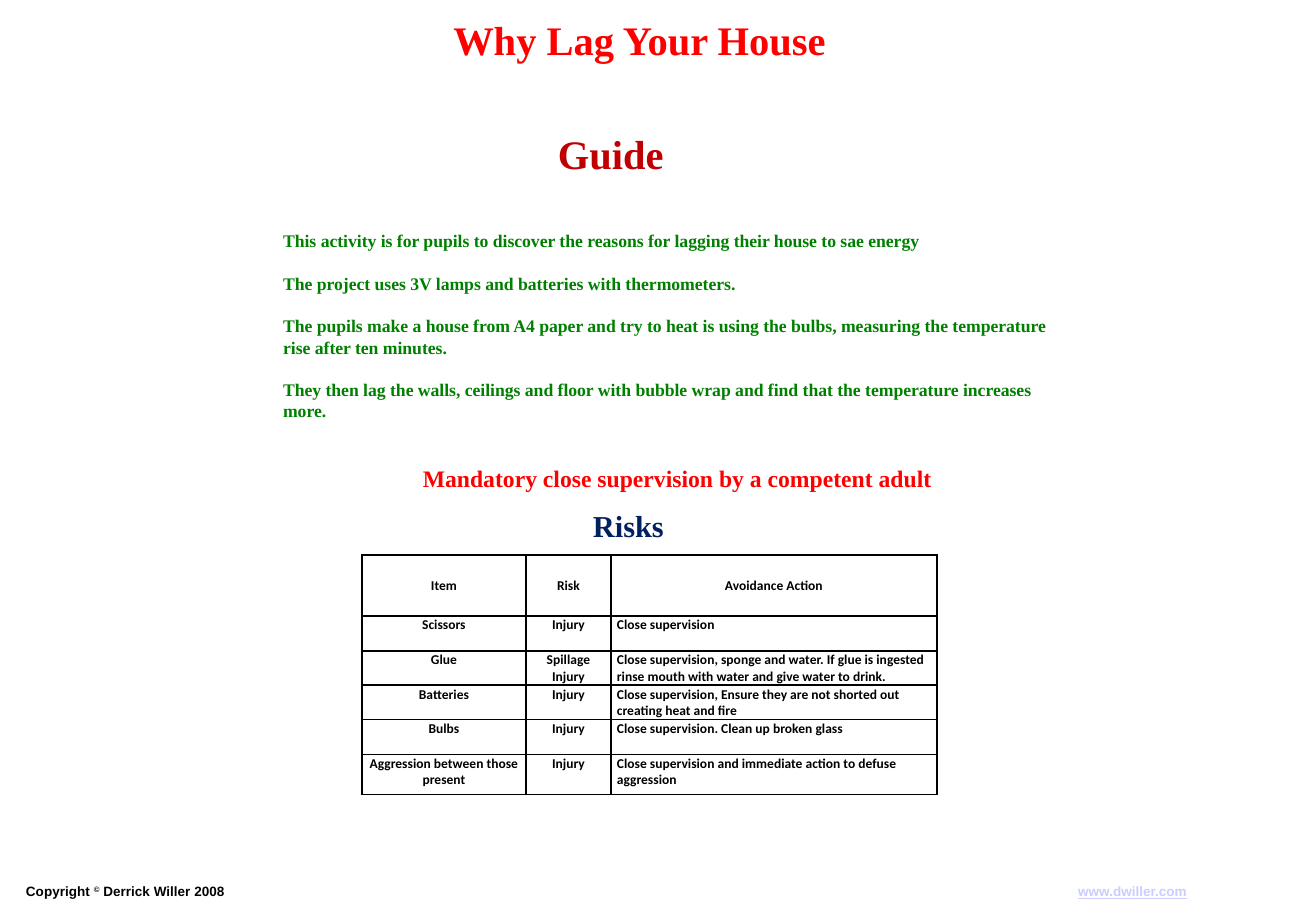
import pptx
import pptx.dml.color
import pptx.enum.text
import pptx.oxml.ns
import pptx.util
from lxml import etree

RGBColor = pptx.dml.color.RGBColor
ALIGN = pptx.enum.text.PP_ALIGN
ANCHOR = pptx.enum.text.MSO_ANCHOR
qn = pptx.oxml.ns.qn

BLACK = RGBColor(0x00, 0x00, 0x00)
RED = RGBColor(0xFF, 0x00, 0x00)
DARK_RED = RGBColor(0xC0, 0x00, 0x00)
GREEN = RGBColor(0x00, 0x80, 0x00)
NAVY = RGBColor(0x00, 0x20, 0x60)
LAVENDER = RGBColor(0xCC, 0xCC, 0xFF)

SERIF, SANS, TABLE_FONT = "Times New Roman", "Arial", "Calibri"
EMU_PER_PX = 7526


def px(length):
    return pptx.util.Emu(length * EMU_PER_PX)


class Page:
    def __init__(self, deck):
        self.slide = deck.slides.add_slide(deck.slide_layouts[1])

    def style(self, para, size, color, font=SERIF, align=ALIGN.LEFT):
        para.alignment = align
        para.font.name = font
        para.font.size = pptx.util.Pt(size)
        para.font.bold = True
        para.font.color.rgb = color

    def place(self, box, left, top, width, height, wrap):
        box.left, box.top, box.width, box.height = map(px, (left, top, width, height))
        frame = box.text_frame
        frame.auto_size = pptx.enum.text.MSO_AUTO_SIZE.NONE
        frame.vertical_anchor = ANCHOR.TOP
        frame.word_wrap = wrap
        return frame

    def title(self, text, size, color, *area):
        frame = self.place(self.slide.shapes.title, *area, wrap=False)
        frame.text = text
        self.style(frame.paragraphs[0], size, color, align=ALIGN.CENTER)

    def body(self, entries, *area):
        """Each entry is (text, size, color, align, space before in points)."""
        frame = self.place(self.slide.placeholders[1], *area, wrap=True)
        frame.text = "\n".join(entry[0] for entry in entries)
        for para, (_, size, color, align, gap) in zip(frame.paragraphs, entries):
            properties = para._p.get_or_add_pPr()
            properties.set("marL", "0")
            properties.set("indent", "0")
            etree.SubElement(properties, qn("a:buNone"))
            para.line_spacing = 1.0
            para.space_before = pptx.util.Pt(gap)
            self.style(para, size, color, align=align)

    def label(self, spans, size, color, *area, font=SERIF, align=ALIGN.LEFT, wrap=False):
        box = self.slide.shapes.add_textbox(0, 0, 0, 0)
        para = self.place(box, *area, wrap=wrap).paragraphs[0]
        for text in spans:
            para.add_run().text = text
        self.style(para, size, color, font, align)
        return para

    def border(self, cell, color, width):
        properties = cell._tc.get_or_add_tcPr()
        for side in ("a:lnL", "a:lnR", "a:lnT", "a:lnB"):
            line = etree.SubElement(properties, qn(side), w=str(pptx.util.Pt(width)))
            fill = etree.SubElement(line, qn("a:solidFill"))
            etree.SubElement(fill, qn("a:srgbClr"), val=str(color))

    def table(self, rows, left, top, widths, heights):
        table = self.slide.shapes.add_table(
            len(rows), len(widths), px(left), px(top), px(sum(widths)), px(sum(heights))
        ).table
        table.first_row = table.horz_banding = False
        for column, width in zip(table.columns, widths):
            column.width = px(width)
        for row, height in zip(table.rows, heights):
            row.height = px(height)
        for r, texts in enumerate(rows):
            for c, text in enumerate(texts):
                cell = table.cell(r, c)
                cell.text = text
                cell.margin_left = cell.margin_right = px(6)
                cell.margin_top, cell.margin_bottom = px(1), px(0)
                cell.vertical_anchor = ANCHOR.MIDDLE if r == 0 else ANCHOR.TOP
                self.border(cell, BLACK, 1)
                cell.fill.background()
                align = ALIGN.LEFT if r and c == 2 else ALIGN.CENTER
                for para in cell.text_frame.paragraphs:
                    self.style(para, 8, BLACK, TABLE_FONT, align)


RISKS = [
    ("Item", "Risk", "Avoidance Action"),
    ("Scissors", "Injury", "Close supervision"),
    ("Glue", "Spillage\nInjury",
     "Close supervision, sponge and water. If glue is ingested rinse mouth with water "
     "and give water to drink."),
    ("Batteries", "Injury",
     "Close supervision, Ensure they are not shorted out creating heat and fire"),
    ("Bulbs", "Injury", "Close supervision. Clean up broken glass"),
    ("Aggression between those present", "Injury",
     "Close supervision and immediate action to defuse aggression"),
]
GUIDE = [
    "This activity is for pupils to discover the reasons for lagging their house to sae energy",
    "The project uses 3V lamps and batteries with thermometers.",
    "The pupils make a house from A4 paper and try to heat is using the bulbs, measuring "
    "the temperature rise after ten minutes.",
    "They then lag the walls, ceilings and floor with bubble wrap and find that the "
    "temperature increases more.",
]
WARNING = "Mandatory close supervision by a competent adult"
LINE_GAP = 12.6


def main():
    deck = pptx.Presentation()
    deck.slide_width, deck.slide_height = px(1316), px(911)
    page = Page(deck)

    # Headings
    page.title("Why Lag Your House", 24, RED, 439, 9, 401, 61)
    page.label(["Guide"], 24, DARK_RED, 546, 123, 131, 61)

    # Guide text and warning
    entries = [(text, 10.5, GREEN, ALIGN.LEFT, LINE_GAP if number else 0)
               for number, text in enumerate(GUIDE)]
    entries.append((WARNING, 14, RED, ALIGN.CENTER, 2 * LINE_GAP))
    page.body(entries, 271, 224, 813, 299)

    # Risk table
    page.label(["Risks"], 18, NAVY, 581, 501, 96, 49)
    page.table(RISKS, 362, 555, (164, 85, 326), (61, 35, 34, 34, 35, 40))

    # Footer
    notice = page.label(["Copyright ", "©", " Derrick Willer 2008"], 8, BLACK,
                        14, 877, 686, 29, font=SANS, wrap=True)
    notice.runs[1]._r.get_or_add_rPr().set("baseline", "30000")
    address = page.label(["www.dwiller.com"], 8, LAVENDER, 1036, 877, 163, 29,
                         font=SANS, align=ALIGN.RIGHT, wrap=True)
    address.font.underline = True

    deck.save("out.pptx")


if __name__ == "__main__":
    main()
